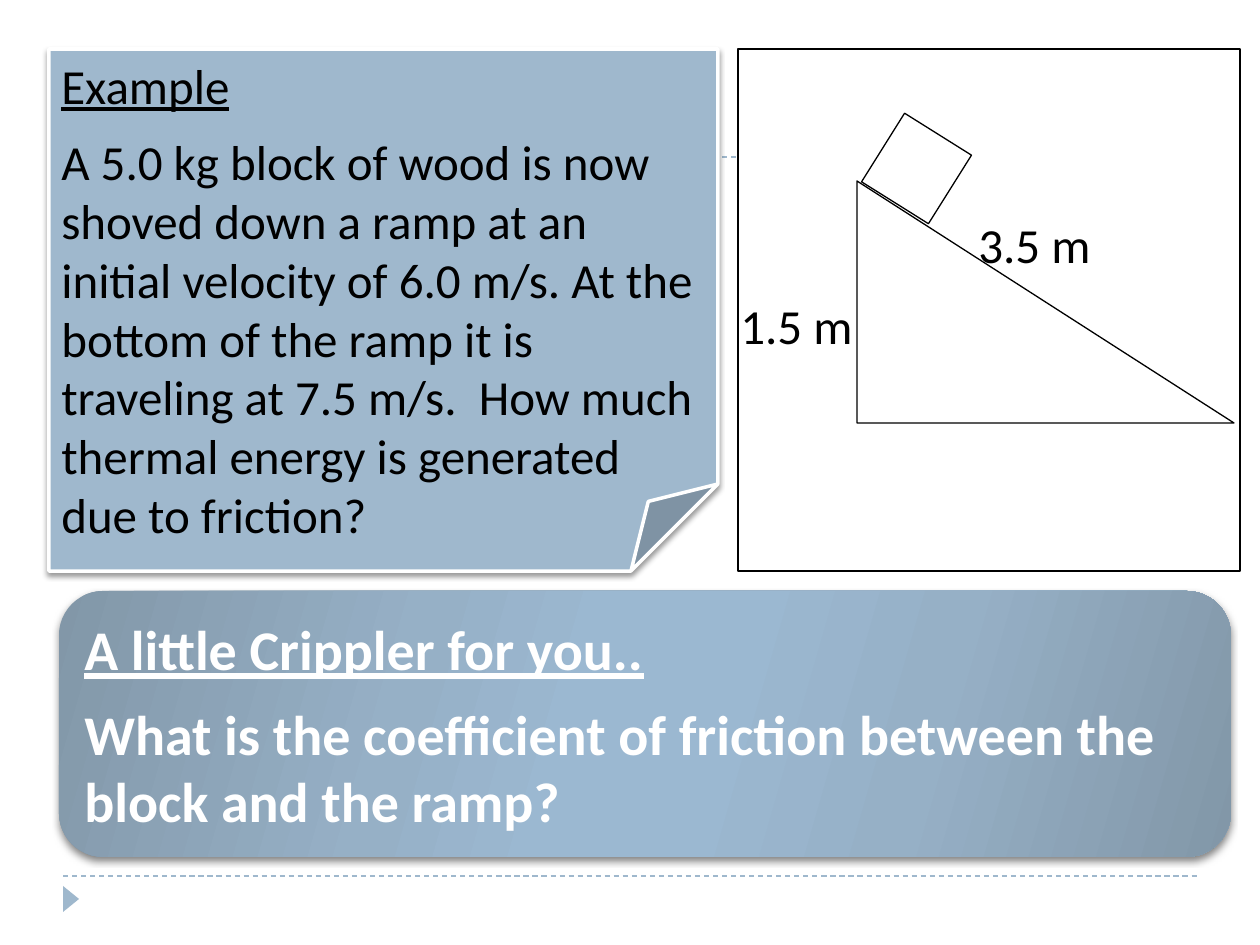
import pptx
import pptx.dml.color
import pptx.enum.dml
import pptx.enum.shapes
import pptx.enum.text
import pptx.oxml
import pptx.oxml.ns
import pptx.util

KIND = pptx.enum.shapes.MSO_SHAPE
ANCHOR = pptx.enum.text.MSO_ANCHOR
ALIGN = pptx.enum.text.PP_ALIGN
Pt = pptx.util.Pt
SCALE = 914400 / 126
COLORS = {"blue": "9FB8CD", "white": "FFFFFF", "black": "000000",
          "edge": "8297A8", "mid": "96B0C6", "core": "9BB8D1"}
BLEND = [(0, "edge"), (30, "mid"), (45, "core"),
         (55, "core"), (73, "mid"), (100, "edge")]

RULES = [157, 876]  # heights of the dashed lines
SHAPES = [
    dict(kind=KIND.ISOSCELES_TRIANGLE, box=(58, 891, 26, 16), turn=90, fill="blue"),
    dict(kind=KIND.RECTANGLE, box=(738, 49, 502, 522), fill="white", line=("black", 1.5)),
    dict(kind=KIND.FOLDED_CORNER, box=(49, 49, 669, 522), fill="blue",
         line=("white", 2), shadow=(40, 3, 2),
         text=["Example",
               "A 5.0 kg block of wood is now shoved down a ramp at an initial "
               "velocity of 6.0 m/s. At the bottom of the ramp it is traveling "
               "at 7.5 m/s.  How much thermal energy is generated due to friction?"],
         font=dict(size=Pt(28)), ink="black", anchor=ANCHOR.TOP),
    dict(kind=KIND.RIGHT_TRIANGLE, box=(857, 181, 377, 242), fill="white",
         line=("black", 0.75)),
    dict(kind=KIND.RECTANGLE, box=(877, 128, 79, 81), turn=32.1, fill="white",
         line=("black", 0.75)),
    dict(box=(728, 289, 149, 81), text=["1.5 m"], font=dict(size=Pt(28)),
         ink="black", anchor=ANCHOR.TOP),
    dict(box=(966, 208, 149, 81), text=["3.5 m"], font=dict(size=Pt(28)),
         ink="black", anchor=ANCHOR.TOP),
    dict(kind=KIND.ROUNDED_RECTANGLE, box=(59, 591, 1172, 266), blend=BLEND,
         shadow=(50, 4, 2),
         text=["A little Crippler for you..",
               "What is the coefficient of friction between the block and the ramp?"],
         font=dict(size=Pt(32), bold=True), ink="white", anchor=ANCHOR.MIDDLE),
]


def px(n):
    return round(n * SCALE)


def rgb(name):
    return pptx.dml.color.RGBColor.from_string(COLORS[name])


def node(xml):
    """Parse XML whose root is in the drawing namespace."""
    space = pptx.oxml.ns.nsdecls("a")
    return pptx.oxml.parse_xml(xml.replace(" ", f" {space} ", 1))


def paint(shape, item):
    if "blend" in item:
        shape.fill.gradient()
        shape.fill.gradient_angle = 360 - 16
        stops = shape._element.spPr.find(".//" + pptx.oxml.ns.qn("a:gsLst"))
        for old in list(stops):
            stops.remove(old)
        for pos, name in item["blend"]:
            stops.append(node(f'<a:gs pos="{pos * 1000}">'
                              f'<a:srgbClr val="{COLORS[name]}"/></a:gs>'))
    else:
        shape.fill.solid()
        shape.fill.fore_color.rgb = rgb(item["fill"])
    if "line" in item:
        name, width = item["line"]
        shape.line.color.rgb = rgb(name)
        shape.line.width = Pt(width)
    else:
        shape.line.fill.background()
    shape.rotation = item.get("turn", 0)
    shape.shadow.inherit = False
    if "shadow" in item:
        alpha, blur, dist = item["shadow"]
        effects = shape._element.spPr.find(pptx.oxml.ns.qn("a:effectLst"))
        effects.append(node(
            f'<a:outerShdw blurRad="{Pt(blur)}" dist="{Pt(dist)}" dir="5400000" '
            f'rotWithShape="0"><a:srgbClr val="{COLORS["black"]}">'
            f'<a:alpha val="{alpha * 1000}"/></a:srgbClr></a:outerShdw>'))


def write(frame, item):
    frame.word_wrap = True
    frame.vertical_anchor = item["anchor"]
    lines = item["text"]
    for i, line in enumerate(lines):
        para = frame.paragraphs[0] if i == 0 else frame.add_paragraph()
        para.alignment = ALIGN.LEFT
        para.space_after = Pt(10)
        run = para.add_run()
        run.text = line
        style = dict(item["font"], name="Calibri",
                     underline=len(lines) > 1 and i == 0)
        for key, value in style.items():
            setattr(run.font, key, value)
        run.font.color.rgb = rgb(item["ink"])


def main():
    deck = pptx.Presentation()
    deck.slide_width, deck.slide_height = px(1260), px(945)
    shapes = deck.slides.add_slide(deck.slide_layouts[6]).shapes
    for y in RULES:
        rule = shapes.add_connector(pptx.enum.shapes.MSO_CONNECTOR.STRAIGHT,
                                    px(63), px(y), px(1197), px(y))
        rule.line.color.rgb = rgb("blue")
        rule.line.width = Pt(0.75)
        rule.line.dash_style = pptx.enum.dml.MSO_LINE.DASH
        rule._element.spPr.append(node("<a:effectLst />"))
    for item in SHAPES:
        box = [px(n) for n in item["box"]]
        if "kind" in item:
            shape = shapes.add_shape(item["kind"], *box)
            paint(shape, item)
        else:
            shape = shapes.add_textbox(*box)
        if "text" in item:
            write(shape.text_frame, item)
    deck.save("out.pptx")


if __name__ == "__main__":
    main()
